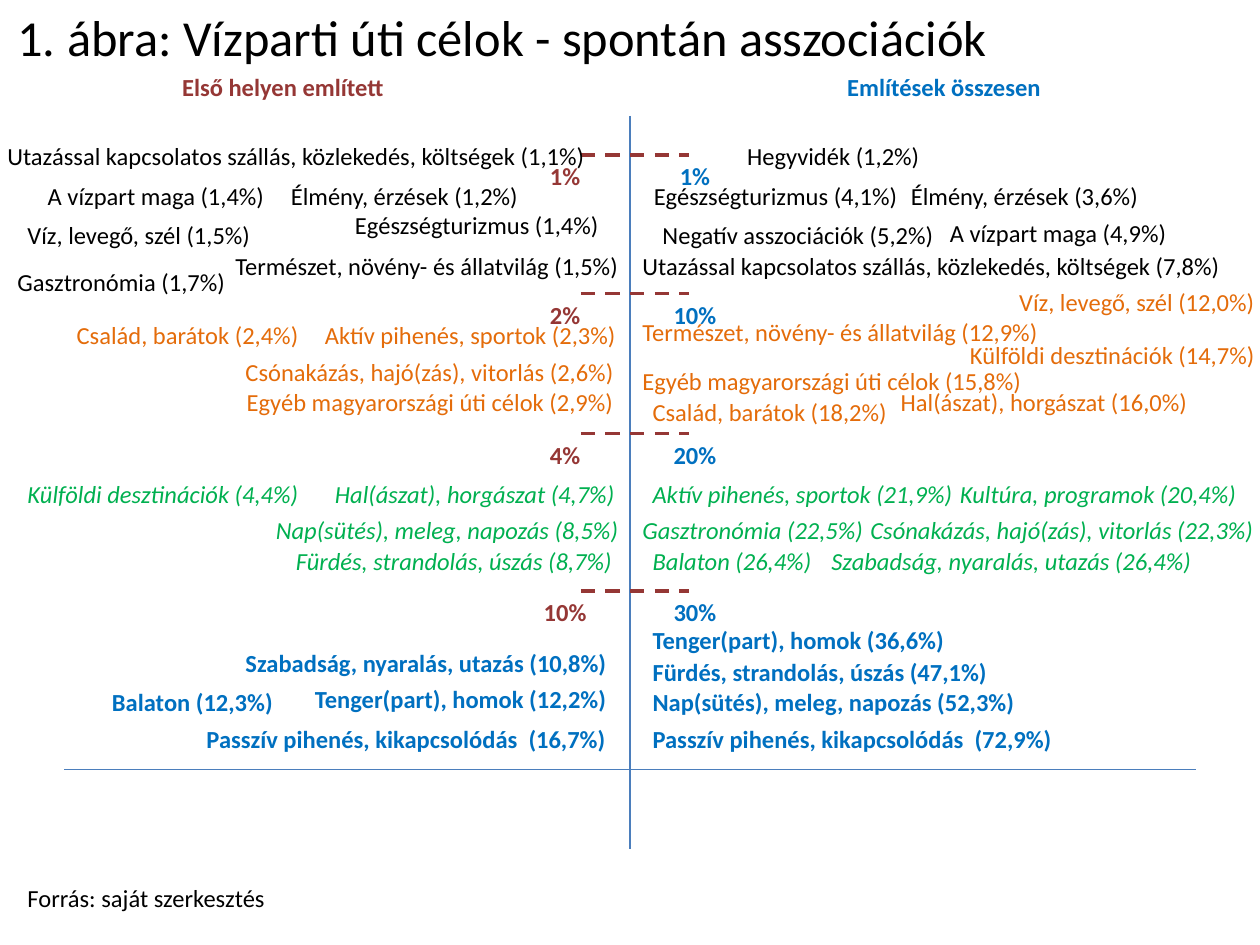
from pptx import Presentation
from pptx import util as u
from pptx.dml.color import RGBColor
from pptx.enum import dml, shapes, text
from pptx.oxml.ns import qn
from lxml import etree

TITLE = ("1. ábra: Vízparti úti célok - spontán asszociációk", 2.9, 4.3, 648, 33.1)
SOURCE = ("Forrás: saját szerkesztés", 8.6, 501.1, 215.3)
HEADINGS = [("Első helyen említett", 54, "first"), ("Említések összesen ", 433.4, "total")]
THRESHOLDS = [(88.6, "1%", "1%"), (167.8, "2%", "10%"), (247.7, "4%", "20%"), (337.7, "10%", "30%")]
THRESHOLD_COLUMNS = [(303.1, "first"), (377.3, "total")]

ASSOCIATIONS = {
    "rare": [
        ("Utazással kapcsolatos szállás, közlekedés, költségek (1,1%)", -2.9, 77, 351.4),
        ("A vízpart maga (1,4%)", 20.2, 100.1, 141.8),
        ("Élmény, érzések (1,2%)", 159.1, 100.1, 144),
        ("Egészségturizmus (1,4%)", 195.8, 116.6, 187.2),
        ("Víz, levegő, szél (1,5%)", 8.6, 122.4, 254.9),
        ("Természet, növény- és állatvilág (1,5%)", 127.4, 139.7, 244.1),
        ("Gasztronómia (1,7%)", 2.9, 149, 243.4),
        ("Hegyvidék (1,2%)", 419.8, 77, 144),
        ("Egészségturizmus (4,1%)", 366.5, 100.1, 243.4),
        ("Élmény, érzések (3,6%)", 513.4, 100.1, 144),
        ("Negatív asszociációk (5,2%)", 371.5, 122.4, 254.9),
        ("A vízpart maga (4,9%)", 535.7, 121, 141.8),
        ("Utazással kapcsolatos szállás, közlekedés, költségek (7,8%)", 360, 139.7, 351.4),
    ],
    "occasional": [
        ("Család, barátok (2,4%)", 36.7, 179.3, 254.9),
        ("Aktív pihenés, sportok (2,3%)", 178.6, 179.3, 187.2),
        ("Csónakázás, hajó(zás), vitorlás (2,6%)", 133.2, 200.2, 254.9),
        ("Egyéb magyarországi úti célok (2,9%)", 133.9, 217.4, 243.4),
        ("Víz, levegő, szél (12,0%)", 575.3, 160.6, 187.2),
        ("Természet, növény- és állatvilág (12,9%)", 360, 177.8, 260.6),
        ("Külföldi desztinációk (14,7%)", 547.2, 190.8, 187.2),
        ("Egyéb magyarországi úti célok (15,8%)", 360, 205.9, 243.4),
        ("Hal(ászat), horgászat (16,0%)", 507.6, 217.4, 254.9),
        ("Család, barátok (18,2%)", 365.8, 223.2, 254.9),
    ],
    "frequent": [
        ("Külföldi desztinációk (4,4%)", 8.6, 270, 254.9),
        ("Hal(ászat), horgászat (4,7%)", 184.3, 270, 187.2),
        ("Nap(sütés), meleg, napozás (8,5%)", 150.5, 290.9, 223.9),
        ("Fürdés, strandolás, úszás (8,7%)", 162, 308.2, 243.4),
        ("Aktív pihenés, sportok (21,9%)", 365.8, 270, 254.9),
        ("Kultúra, programok (20,4%)", 541.4, 270, 254.9),
        ("Gasztronómia (22,5%)", 360, 290.9, 254.9),
        ("Csónakázás, hajó(zás), vitorlás (22,3%)", 490.3, 290.9, 241.2),
        ("Balaton (26,4%)", 365.8, 308.2, 243.4),
        ("Szabadság, nyaralás, utazás (26,4%)", 468, 308.2, 223.9),
    ],
    "dominant": [
        ("Szabadság, nyaralás, utazás (10,8%)", 133.2, 366.5, 254.9),
        ("Tenger(part), homok (12,2%)", 172.8, 387.4, 187.2),
        ("Balaton (12,3%)", 56.9, 388.8, 115.9),
        ("Passzív pihenés, kikapcsolódás  (16,7%)", 110.9, 410.4, 243.4),
        ("Tenger(part), homok (36,6%)", 365.8, 353.5, 187.2),
        ("Fürdés, strandolás, úszás (47,1%)", 365.8, 372.2, 254.9),
        ("Nap(sütés), meleg, napozás (52,3%)", 365.8, 388.8, 252),
        ("Passzív pihenés, kikapcsolódás  (72,9%)", 365.8, 410.4, 243.4),
    ],
}

BLACK, RED, BLUE, GREEN, ORANGE = "000000", "953735", "0070C0", "00B050", "E46C0A"
THEME = {
    "font": "Calibri",
    "text": {
        "title": {"size": 28.8, "color": BLACK},
        "rare": {"size": 14, "color": BLACK},
        "occasional": {"size": 14, "color": ORANGE},
        "frequent": {"size": 14, "color": GREEN, "italic": True},
        "dominant": {"size": 14, "color": BLUE, "bold": True},
        "first": {"size": 14, "color": RED, "bold": True},
        "total": {"size": 14, "color": BLUE, "bold": True},
    },
    "axis": {"color": "4B7EBC", "width": 0.75},
    "threshold": {"color": RED, "width": 2, "dash": dml.MSO_LINE.DASH},
}
LABEL_H = 24.5


def add_label(s, content, x, y, w, style, h=LABEL_H, align=text.PP_ALIGN.LEFT,
              anchor=text.MSO_ANCHOR.TOP):
    tf = s.shapes.add_textbox(u.Pt(x), u.Pt(y), u.Pt(w), u.Pt(h)).text_frame
    tf.word_wrap = True
    tf.vertical_anchor = anchor
    p = tf.paragraphs[0]
    p.alignment = align
    r = p.add_run()
    r.text = content
    look = THEME["text"][style]
    values = {"name": THEME["font"], "size": u.Pt(look["size"]),
              "bold": look.get("bold", False), "italic": look.get("italic", False)}
    for name, value in values.items():
        setattr(r.font, name, value)
    r.font.color.rgb = RGBColor.from_string(look["color"])


def add_line(s, x1, y1, x2, y2, style):
    sp = s.shapes.add_connector(shapes.MSO_CONNECTOR.STRAIGHT, *map(u.Pt, (x1, y1, x2, y2)))
    look = THEME[style]
    sp.line.color.rgb = RGBColor.from_string(look["color"])
    sp.line.width = u.Pt(look["width"])
    if "dash" in look:
        sp.line.dash_style = look["dash"]
    etree.SubElement(sp._element.spPr, qn("a:effectLst"))


def main():
    prs = Presentation()
    prs.slide_width, prs.slide_height = u.Pt(720), u.Pt(540)
    s = prs.slides.add_slide(prs.slide_layouts[6])
    center = text.PP_ALIGN.CENTER

    content, x, y, w, h = TITLE
    add_label(s, content, x, y, w, "title", h, anchor=text.MSO_ANCHOR.MIDDLE)
    add_label(s, *SOURCE, "rare")

    add_line(s, 360, 66.2, 360, 485.3, "axis")
    add_line(s, 36.7, 439.9, 683.3, 439.9, "axis")

    for y, *values in THRESHOLDS:
        add_line(s, 331.9, y, 393.8, y, "threshold")
        for value, (x, style) in zip(values, THRESHOLD_COLUMNS):
            add_label(s, value, x, y, 39.6, style, align=center)

    for content, x, style in HEADINGS:
        add_label(s, content, x, 37.4, 215.3, style, align=center)

    for style, labels in ASSOCIATIONS.items():
        for label in labels:
            add_label(s, *label, style)

    prs.save("out.pptx")


if __name__ == "__main__":
    main()
